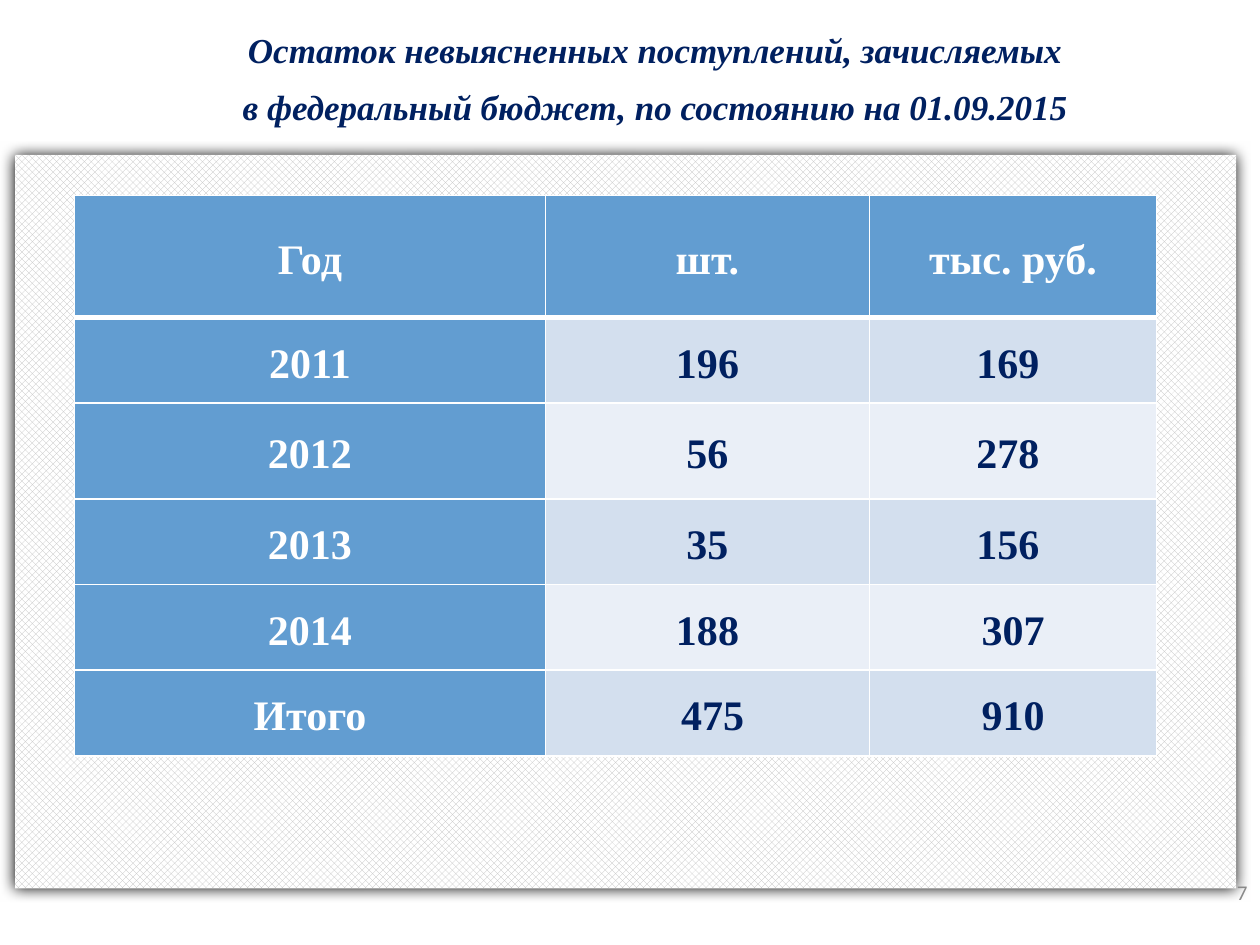
from lxml.etree import SubElement as Sub
from pptx import Presentation
from pptx.dml.color import RGBColor as RGB
from pptx.enum.dml import MSO_PATTERN_TYPE as Pat
from pptx.enum.shapes import MSO_SHAPE as Shape
from pptx.enum.text import MSO_ANCHOR as Anchor, PP_ALIGN as Align
from pptx.oxml.ns import qn
from pptx.util import Inches, Pt

# Content
TITLE = ["Остаток невыясненных поступлений, зачисляемых",
         "в федеральный бюджет, по состоянию на 01.09.2015"]
PAGE = "7"
ROWS = [
    ("Год", "шт.", "тыс. руб."),
    ("2011", "196", "169 "),
    ("2012", "56", "278 "),
    ("2013", "35", "156 "),
    ("2014", "188", "307"),
    ("Итого", " 475", "910"),
]
WIDTHS = [3.74, 2.57, 2.28]
HEIGHTS = [0.97, 0.68, 0.76, 0.68, 0.68, 0.68]
COLORS = {"navy": "002060", "white": "FFFFFF", "head": "629DD1",
          "odd": "D3DFEE", "even": "EAEFF7", "mesh": "BFBFBF",
          "gray": "898989", "black": "000000"}
SERIF = "Times New Roman"


def color(name):
    return RGB.from_string(COLORS[name])


def style(par, size, name, tint, align, bold=False, italic=False):
    par.alignment = align
    font = par.font
    font.size, font.name = Pt(size), name
    font.bold, font.italic = bold, italic
    font.color.rgb = color(tint)


def add_text(slide, box, lines, anchor, *look, **more):
    frame = slide.shapes.add_textbox(*map(Inches, box)).text_frame
    frame.word_wrap = True
    frame.vertical_anchor = anchor
    frame.text = "\n".join(lines)
    for par in frame.paragraphs:
        style(par, *look, **more)
    return frame.paragraphs


def add_shadow(shape, blur, dist, angle):
    shape.shadow.inherit = False
    effects = shape._element.spPr.find(qn("a:effectLst"))
    shade = Sub(effects, qn("a:outerShdw"), blurRad=str(Pt(blur)),
                dist=str(Pt(dist)), dir=str(angle * 60000),
                algn="ctr", rotWithShape="0")
    Sub(shade, qn("a:srgbClr"), val=COLORS["black"])


def add_border(cell, side, width):
    line = Sub(cell._tc.get_or_add_tcPr(), qn("a:ln" + side), w=str(Pt(width)))
    Sub(Sub(line, qn("a:solidFill")), qn("a:srgbClr"), val=COLORS["white"])


def fill_cell(cell, text, row, col):
    key = row == 0 or col == 0
    cell.text = text
    cell.vertical_anchor = Anchor.MIDDLE
    cell.margin_left = cell.margin_right = Inches(0.07)
    cell.margin_top = cell.margin_bottom = 0
    par = cell.text_frame.paragraphs[0]
    style(par, 24, SERIF, "white" if key else "navy", Align.CENTER, bold=True)
    par.line_spacing = 1.15
    # The rule under the header row is thicker
    thick = {(0, "B"), (1, "T")}
    for side in "LRTB":
        add_border(cell, side, 3 if (row, side) in thick else 1)
    cell.fill.solid()
    cell.fill.fore_color.rgb = color("head" if key else "odd" if row % 2 else "even")


def main():
    deck = Presentation()
    deck.slide_width, deck.slide_height = Inches(10), Inches(7.5)
    slide = deck.slides.add_slide(deck.slide_layouts[6])

    # Patterned panel
    panel = slide.shapes.add_shape(
        Shape.RECTANGLE, *map(Inches, (0.12, 1.23, 9.69, 5.82)))
    panel.fill.patterned()
    panel.fill.pattern = Pat.from_xml("openDmnd")
    panel.fill.fore_color.rgb = color("mesh")
    panel.fill.back_color.rgb = color("white")
    panel.line.fill.background()
    add_shadow(panel, 8.5, 1, 90)

    # Title and page number
    title = add_text(slide, (0.67, 0.13, 9.06, 0.94), TITLE, Anchor.TOP,
                     20, SERIF, "navy", Align.CENTER, bold=True, italic=True)
    for par in title:
        par.line_spacing = 1.15
    title[1].space_before = Pt(4.8)
    add_text(slide, (7.75, 6.88, 2.25, 0.4), [PAGE], Anchor.MIDDLE,
             12, "Calibri", "gray", Align.RIGHT)

    # Table
    size = (sum(WIDTHS), sum(HEIGHTS))
    table = slide.shapes.add_table(
        len(ROWS), len(WIDTHS), *map(Inches, (0.59, 1.55, *size))).table
    for col, width in zip(table.columns, WIDTHS):
        col.width = Inches(width)
    for row, height in zip(table.rows, HEIGHTS):
        row.height = Inches(height)
    for r, texts in enumerate(ROWS):
        for c, text in enumerate(texts):
            fill_cell(table.cell(r, c), text, r, c)

    deck.save("out.pptx")


if __name__ == "__main__":
    main()
